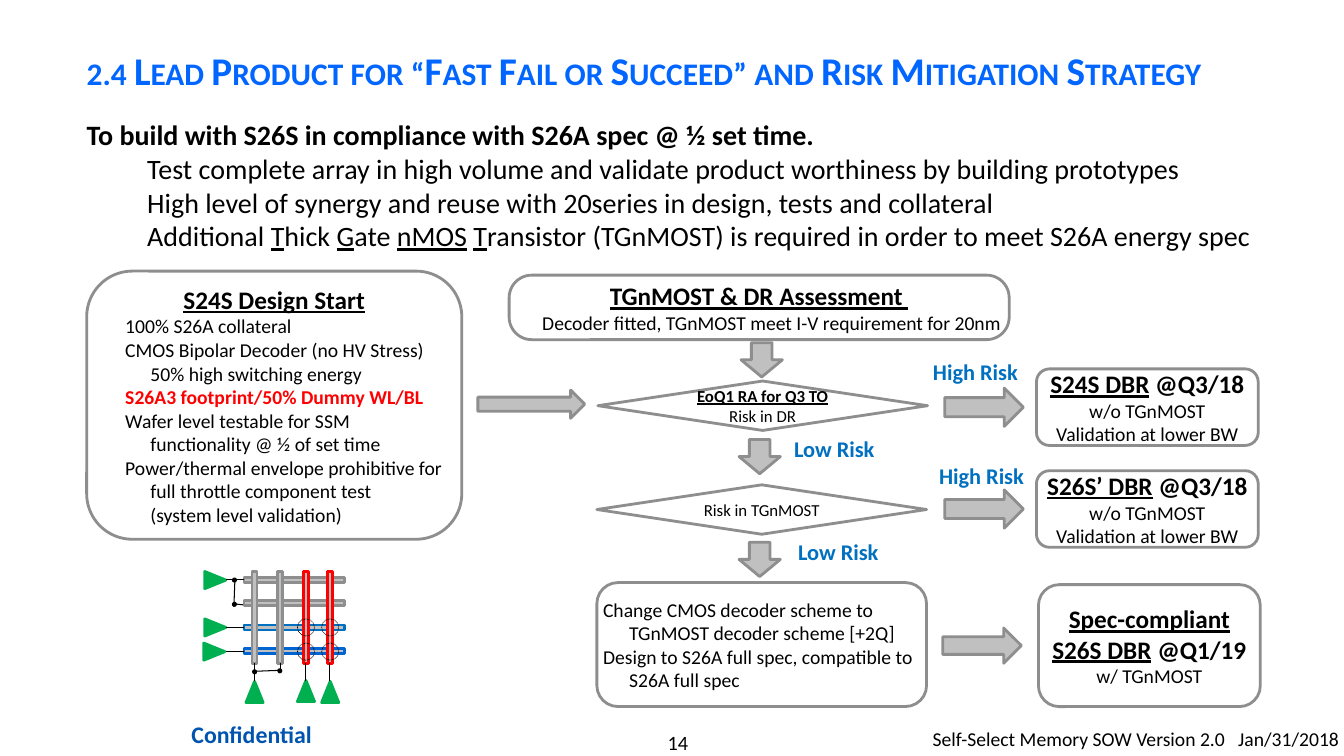
"""Build the lead product and risk mitigation strategy slide."""
import lxml.etree
import pptx
import pptx.dml.color
import pptx.enum.dml
import pptx.enum.shapes
import pptx.enum.text
import pptx.oxml.ns
import pptx.util

Inches = pptx.util.Inches
Pt = pptx.util.Pt
RGBColor = pptx.dml.color.RGBColor
SHAPE = pptx.enum.shapes.MSO_SHAPE
LEFT = pptx.enum.text.PP_ALIGN.LEFT
CENTER = pptx.enum.text.PP_ALIGN.CENTER
MIDDLE = pptx.enum.text.MSO_ANCHOR.MIDDLE
qn = pptx.oxml.ns.qn

BLACK = RGBColor(0x00, 0x00, 0x00)
TITLE_BLUE = RGBColor(0x00, 0x66, 0xFF)
CONFIDENTIAL_BLUE = RGBColor(0x00, 0x54, 0xB0)
RISK_BLUE = RGBColor(0x00, 0x70, 0xC0)
BAR_BLUE = RGBColor(0x00, 0x64, 0xD2)
RED = RGBColor(0xFF, 0x00, 0x00)
GREEN = RGBColor(0x00, 0xB0, 0x50)
OUTLINE_GRAY = RGBColor(0x8E, 0x8E, 0x8E)
FILL_GRAY = RGBColor(0xC0, 0xC0, 0xC0)

presentation = pptx.Presentation()
presentation.slide_width = Inches(13.33)
presentation.slide_height = Inches(7.5)
slide = presentation.slides.add_slide(presentation.slide_layouts[1])


def write(shape, paragraphs, inset=None):
    """Fill a shape with (text, size, bold, color, align, margin, indent); underscores enclose underlining."""
    frame = shape.text_frame
    frame.word_wrap = True
    if inset is not None:
        frame.margin_left = frame.margin_right = Inches(inset)
        frame.margin_top = frame.margin_bottom = Inches(inset)
    for number, (text, size, bold, color, align, margin, indent) in enumerate(paragraphs):
        paragraph = frame.add_paragraph() if number else frame.paragraphs[0]
        parts = text.split("_")
        paragraph.text = parts[0]
        for index, part in enumerate(parts[1:], 1):
            if part:
                run = paragraph.add_run()
                run.text = part
                run.font.underline = index % 2 == 1
        paragraph.alignment = align
        paragraph.space_before = Pt(0)
        properties = paragraph._p.get_or_add_pPr()
        properties.set("marL", str(Inches(margin)))
        properties.set("indent", str(Inches(indent)))
        lxml.etree.SubElement(properties, qn("a:buNone"))
        for line_break in paragraph._p.findall(qn("a:br")):
            lxml.etree.SubElement(line_break, qn("a:rPr"), sz=str(size * 100))
        for run in paragraph.runs:
            run.font.name = "Calibri"
            run.font.size = Pt(size)
            run.font.bold = bold
            run.font.color.rgb = color


def draw(kind, left, top, width, height, fill=None, line=OUTLINE_GRAY, weight=2):
    """Add a preset shape with a plain fill and outline."""
    shape = slide.shapes.add_shape(kind, Inches(left), Inches(top), Inches(width), Inches(height))
    shape.shadow.inherit = False
    if fill is None:
        shape.fill.background()
    else:
        shape.fill.solid()
        shape.fill.fore_color.rgb = fill
    if line is None:
        shape.line.fill.background()
    else:
        shape.line.color.rgb = line
        shape.line.width = Pt(weight)
    return shape


title, body = slide.placeholders
for placeholder, left, top, width, height in [
    (title, 0.76, 0.21, 12.07, 0.92),
    (body, 0.76, 1.12, 11.93, 1.68),
]:
    placeholder.left, placeholder.top = Inches(left), Inches(top)
    placeholder.width, placeholder.height = Inches(width), Inches(height)
    placeholder.text_frame.auto_size = pptx.enum.text.MSO_AUTO_SIZE.NONE

write(title, [("2.4 Lead Product for “Fast Fail or Succeed” and Risk Mitigation Strategy",
               28, True, TITLE_BLUE, LEFT, 0, 0)])
title.text_frame.vertical_anchor = MIDDLE
title.text_frame.paragraphs[0].line_spacing = 1.1
title.text_frame.paragraphs[0].runs[0].font._element.set("cap", "small")

goals = [
    "Test complete array in high volume and validate product worthiness by building prototypes",
    "High level of synergy and reuse with 20series in design, tests and collateral",
    "Additional _T_hick _G_ate _nMOS_ _T_ransistor (TGnMOST) is required in order to meet S26A energy spec",
]
write(body, [("To build with S26S in compliance with S26A spec @ ½ set time.", 20, True, BLACK, LEFT, 0, 0)]
      + [(goal, 20, False, BLACK, LEFT, 1.21, -0.61) for goal in goals])
for paragraph in body.text_frame.paragraphs[1:]:
    paragraph.level = 1

for text, left, top, width, height, size, bold, color, align, inset in [
    ("14", 5.56, 7.24, 2.33, 0.24, 14.5, False, BLACK, CENTER, 0),
    ("Confidential", 1.55, 7.08, 1.89, 0.41, 17, True, CONFIDENTIAL_BLUE, CENTER, 0.06),
    ("Self-Select Memory SOW Version 2.0   Jan/31/2018", 9.25, 7.16, 4.08, 0.34, 14, False, BLACK, LEFT, 0),
    ("High Risk", 9.14, 3.5, 1.07, 0.38, 16, True, RISK_BLUE, CENTER, 0.05),
    ("High Risk", 9.2, 4.53, 1.07, 0.38, 16, True, RISK_BLUE, CENTER, 0.05),
    ("Low Risk", 7.74, 4.26, 1.07, 0.38, 16, True, RISK_BLUE, CENTER, 0.05),
    ("Low Risk", 7.78, 5.28, 1.07, 0.38, 16, True, RISK_BLUE, CENTER, 0.05),
]:
    label = slide.shapes.add_textbox(Inches(left), Inches(top), Inches(width), Inches(height))
    write(label, [(text, size, bold, color, align, 0, 0)], inset)
    label.text_frame.vertical_anchor = MIDDLE

design_points = [
    ("100% S26A collateral", False, BLACK),
    ("CMOS Bipolar Decoder (no HV Stress)\v50% high switching energy", False, BLACK),
    ("S26A3 footprint/50% Dummy WL/BL", True, RED),
    ("Wafer level testable for SSM functionality @ ½ of set time", False, BLACK),
    ("Power/thermal envelope prohibitive for full throttle component test\v(system level validation)",
     False, BLACK),
]
decoder_steps = [
    "Change CMOS decoder scheme to TGnMOST decoder scheme [+2Q]",
    "Design to S26A full spec, compatible to S26A full spec",
]
without_transistor = [(text, 14, False, BLACK, CENTER, 0, 0) for text in ("w/o TGnMOST", "Validation at lower BW")]
for left, top, width, height, paragraphs in [
    (0.86, 2.69, 3.72, 2.66, [("_S24S Design Start_", 18, True, BLACK, CENTER, 0, 0)]
     + [(text, 14, bold, color, LEFT, 0.5, -0.25) for text, bold, color in design_points]),
    (5.05, 2.73, 4.96, 0.64, [
        ("_TGnMOST & DR Assessment _", 18, True, BLACK, CENTER, 0, 0),
        ("Decoder fitted, TGnMOST meet I-V requirement for 20nm", 14, False, BLACK, CENTER, 0.5, -0.25)]),
    (5.92, 5.78, 3.27, 1.23, [(step, 14, False, BLACK, LEFT, 0.26, -0.26) for step in decoder_steps]),
    (10.28, 3.66, 2.2, 0.76, [("_S24S DBR_ @Q3/18", 18, True, BLACK, CENTER, 0, 0)] + without_transistor),
    (10.28, 4.67, 2.2, 0.76, [("_S26S’ DBR_ @Q3/18", 18, True, BLACK, CENTER, 0, 0)] + without_transistor),
    (10.3, 5.8, 2.2, 1.21, [
        ("_Spec-compliant S26S DBR_ @Q1/19", 18, True, BLACK, CENTER, 0, 0),
        ("w/ TGnMOST", 14, False, BLACK, CENTER, 0, 0)]),
]:
    box = draw(SHAPE.ROUNDED_RECTANGLE, left, top, width, height)
    box.adjustments[0] = 0.35 if height == 0.64 else 0.17
    write(box, paragraphs, 0)

for left, top, lines in [
    (5.93, 3.78, [("_EoQ1 RA for Q3 TO_", True), ("Risk in DR", False)]),
    (5.92, 4.81, [("Risk in TGnMOST", False)]),
]:
    decision = draw(SHAPE.DIAMOND, left, top, 3.27, 0.49)
    write(decision, [(text, 12, bold, BLACK, CENTER, 0, 0) for text, bold in lines])

for left, top in [(7.35, 3.4), (7.33, 4.36), (7.33, 5.38)]:
    draw(SHAPE.DOWN_ARROW, left, top, 0.41, 0.34, FILL_GRAY)
for left, top, width, height in [
    (4.74, 3.87, 1.06, 0.28), (9.37, 3.85, 0.78, 0.38), (9.37, 4.86, 0.78, 0.38), (9.35, 6.23, 0.78, 0.35),
]:
    draw(SHAPE.RIGHT_ARROW, left, top, width, height, FILL_GRAY)

for top, color in [(5.73, OUTLINE_GRAY), (5.96, OUTLINE_GRAY), (6.2, RISK_BLUE), (6.43, BAR_BLUE)]:
    draw(SHAPE.RECTANGLE, 2.42, top, 1, 0.05, FILL_GRAY, color)
for left, color in [(2.5, OUTLINE_GRAY), (2.75, OUTLINE_GRAY), (3.01, RED), (3.25, RED)]:
    draw(SHAPE.RECTANGLE, left, 5.67, 0.05, 0.91, FILL_GRAY, color)

for left, top, rotation in [
    (2.05, 5.65, 90), (2.05, 6.12, 90), (2.04, 6.36, 90), (2.44, 6.76, 0), (2.95, 6.75, 0), (3.19, 6.76, 0),
]:
    driver = draw(SHAPE.ISOSCELES_TRIANGLE, left, top, 0.17, 0.21, GREEN, GREEN)
    driver.rotation = rotation

row_wires = [(2.24, y, 2.42, y) for y in (5.75, 6.23, 6.46)]
column_wires = [(x, 6.76, x, 6.58) for x in (2.52, 3.03, 3.27)]
joining_wires = [(2.32, 6.02, 2.33, 5.75), (2.31, 5.99, 2.41, 6), (2.78, 6.67, 2.78, 6.58), (2.52, 6.66, 2.78, 6.65)]
for wire in row_wires + column_wires + joining_wires:
    connector = slide.shapes.add_connector(pptx.enum.shapes.MSO_CONNECTOR.STRAIGHT, *map(Inches, wire))
    connector.line.color.rgb = BLACK
    connector.line.width = Pt(0.75)
    lxml.etree.SubElement(connector._element.spPr, qn("a:effectLst"))

for left, top in [(2.3, 5.73), (2.3, 5.97), (2.5, 6.64), (2.75, 6.63)]:
    draw(SHAPE.OVAL, left, top, 0.05, 0.05, BLACK, None)
for left in (2.95, 3.19):
    for top in (6.14, 6.38):
        crossing = draw(SHAPE.OVAL, left, top, 0.17, 0.17, None, BLACK, 0.5)
        crossing.line.dash_style = pptx.enum.dml.MSO_LINE.ROUND_DOT

presentation.save("out.pptx")
